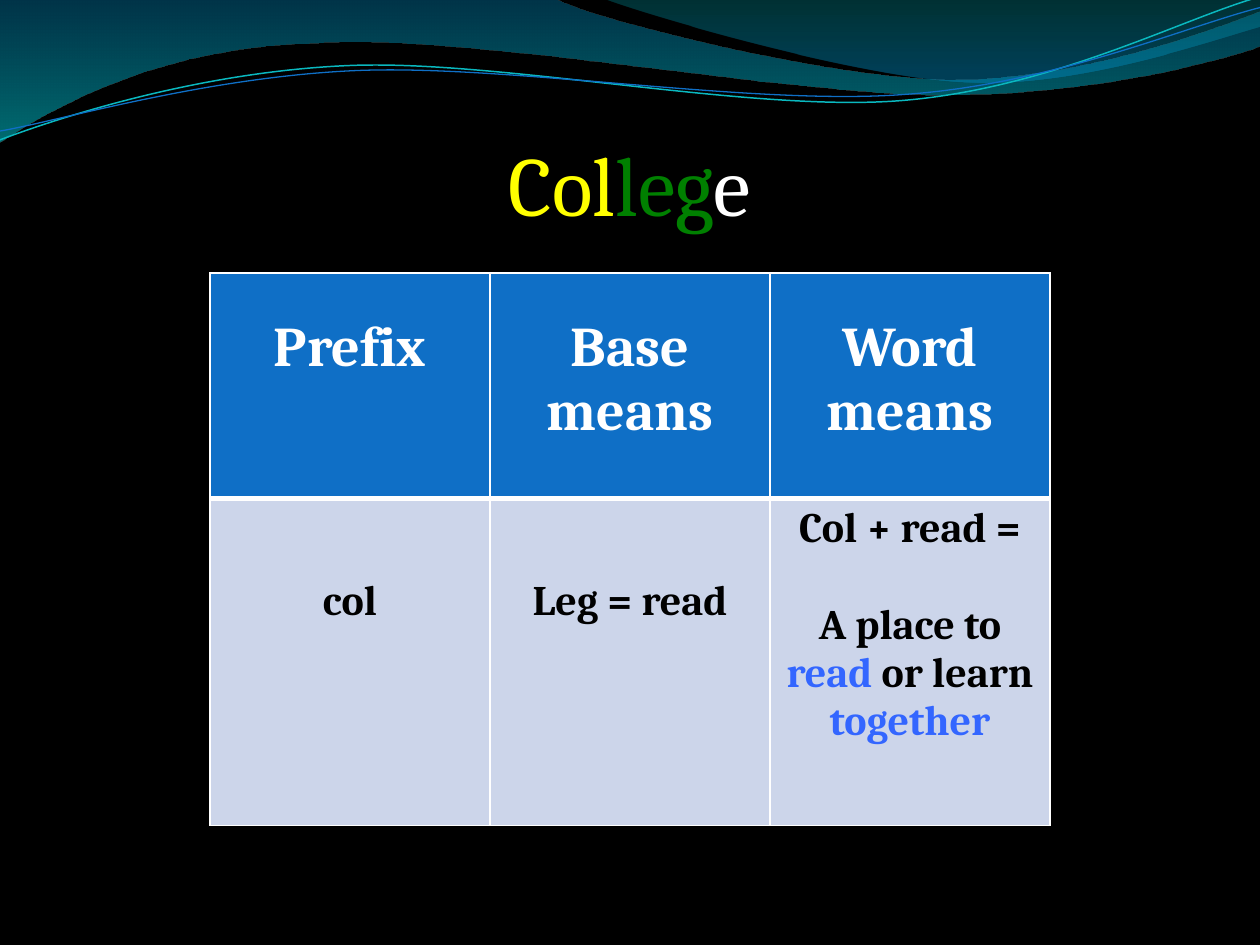
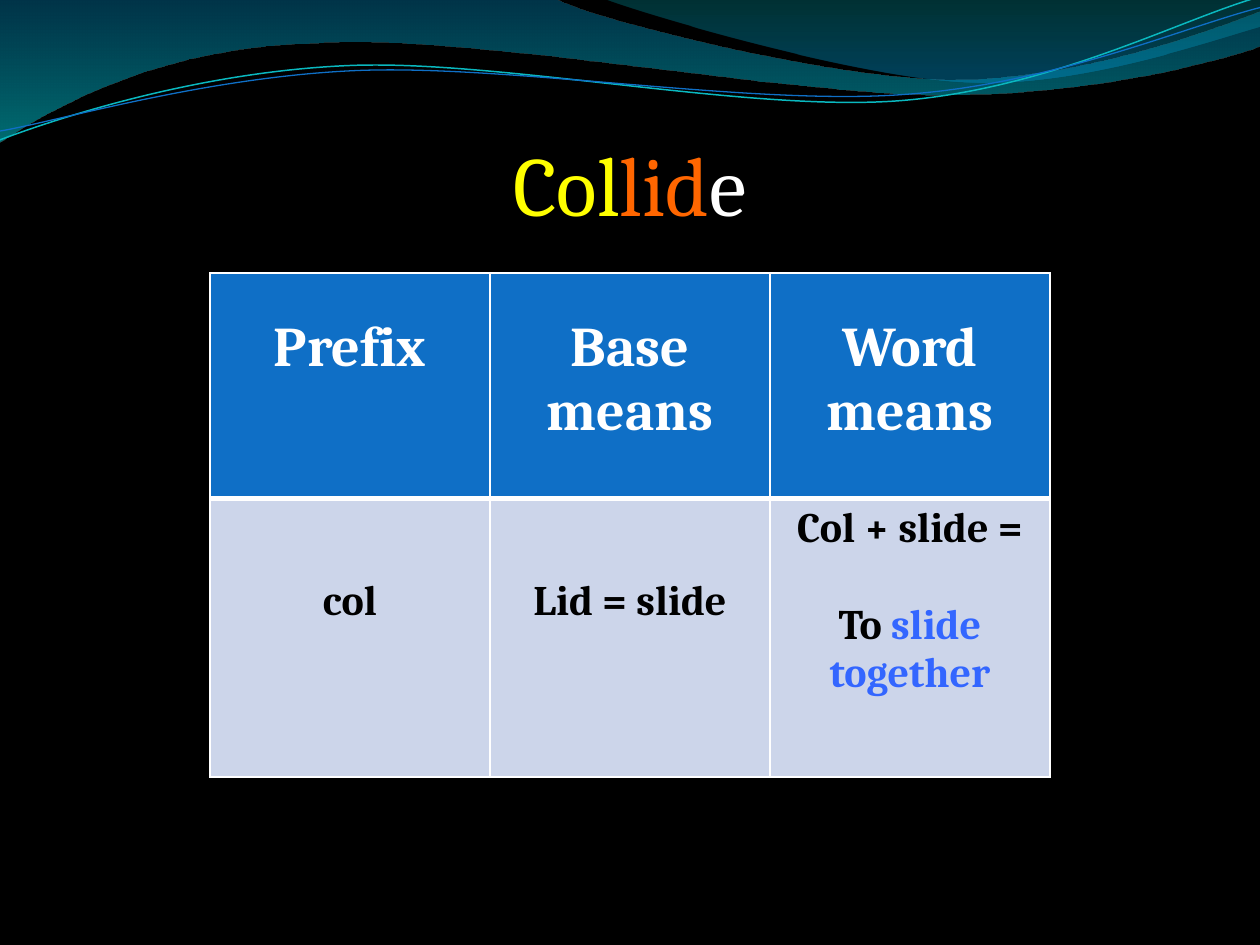
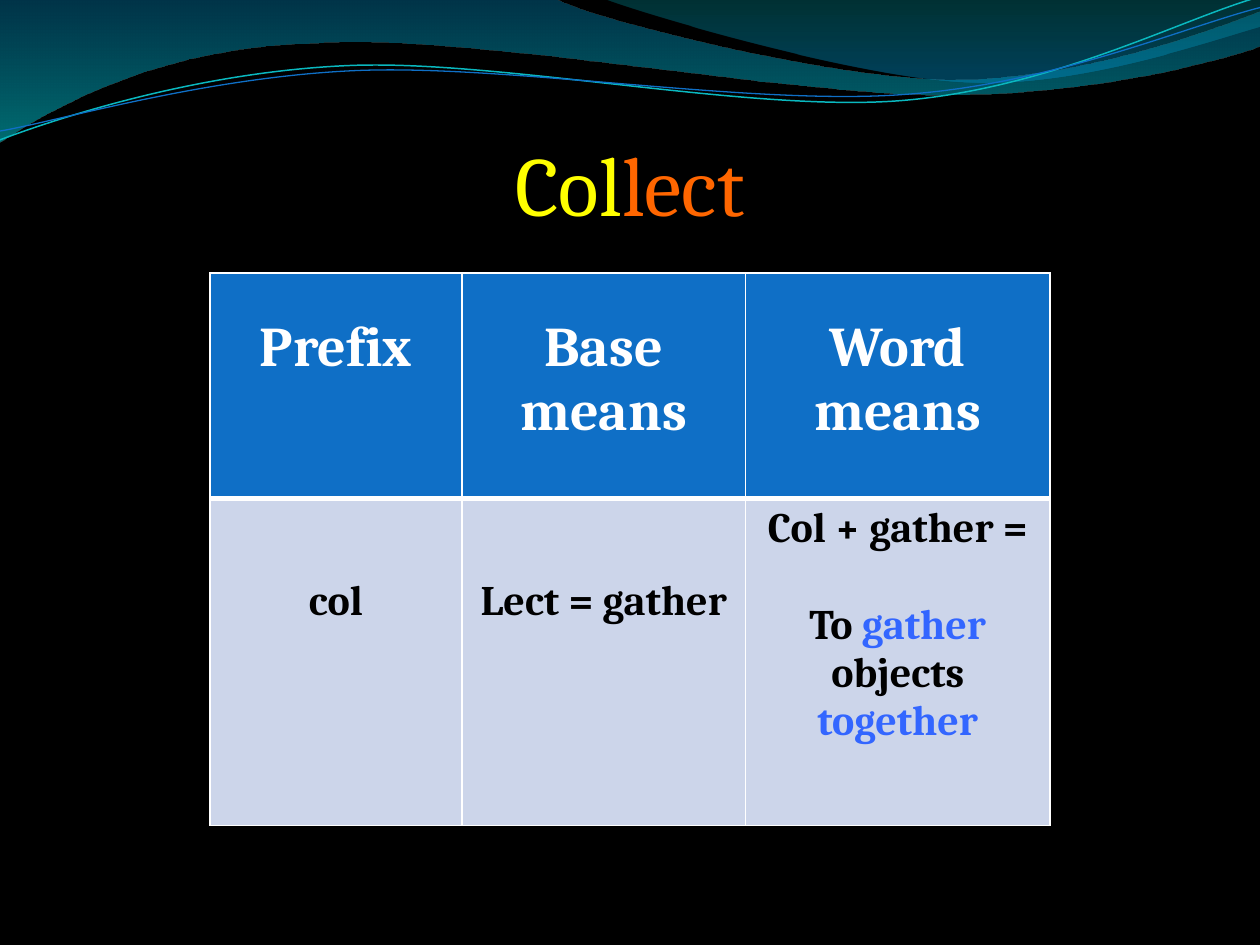
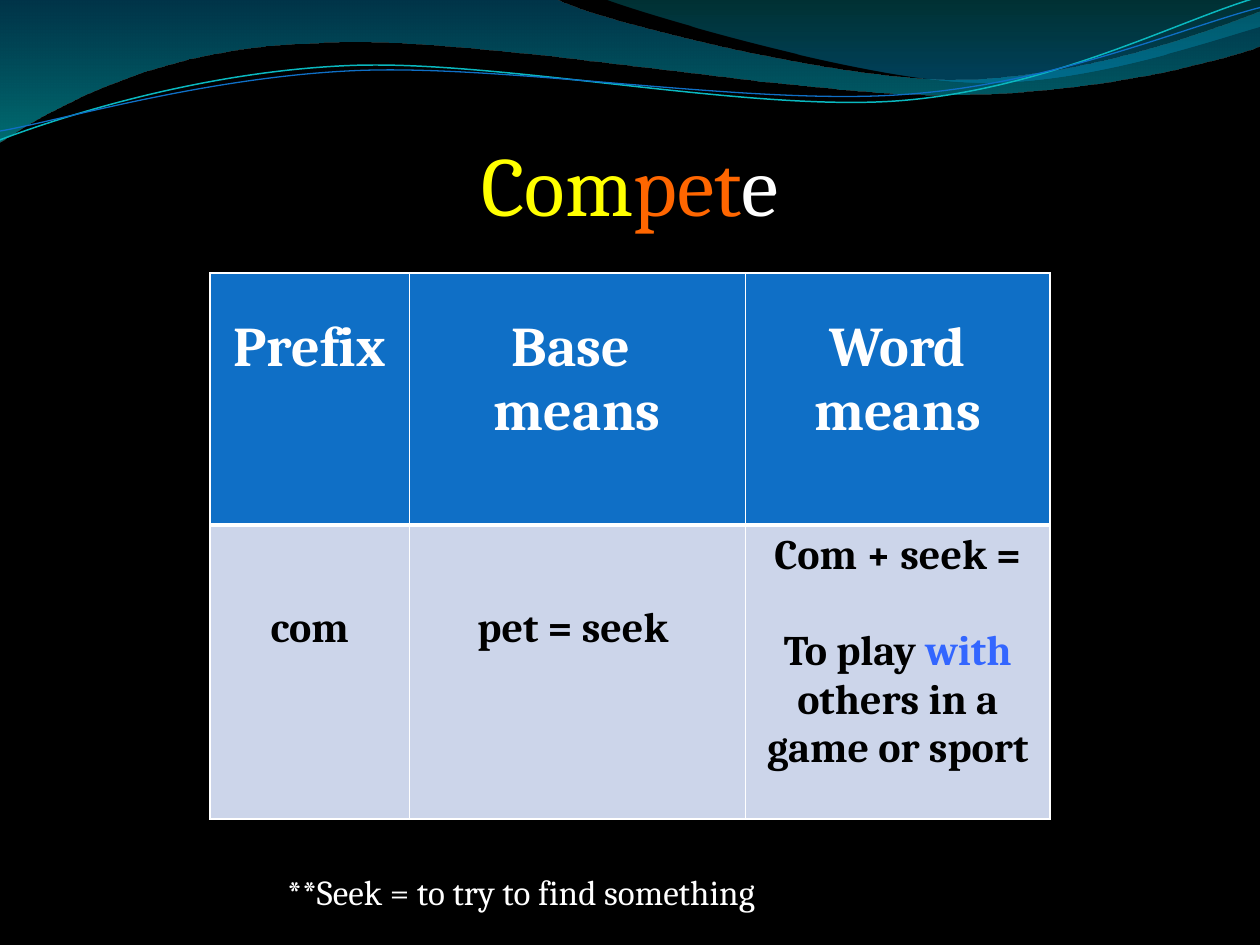
from math import cos, radians, sin

from lxml.etree import SubElement
from pptx import Presentation
from pptx.dml.color import RGBColor
from pptx.enum.text import MSO_ANCHOR, PP_ALIGN
from pptx.oxml.ns import qn
from pptx.util import Inches, Pt

# Colours and type
BLACK = RGBColor(0x00, 0x00, 0x00)
WHITE = RGBColor(0xFF, 0xFF, 0xFF)
YELLOW = RGBColor(0xFF, 0xFF, 0x00)
GREEN = RGBColor(0x00, 0x80, 0x00)
ORANGE = RGBColor(0xFF, 0x66, 0x00)
ACCENT = RGBColor(0x33, 0x66, 0xFF)
BLUE = RGBColor(0x0F, 0x6F, 0xC6)
PALE = RGBColor(0xCC, 0xD5, 0xEA)
CYAN = RGBColor(0x0A, 0xB8, 0xBF)
FONT = "Cambria"
TITLE_SIZE, HEAD_SIZE, CELL_SIZE, NOTE_SIZE = 48, 32, 24, 20

# Content: coloured parts of each word and table cells;
# column widths and row heights count units of a twelfth of an inch
UNIT = Inches(1) / 12
TABLE_LEFT, TABLE_TOP = 20, 26
HEADINGS = ["Prefix", "Base means", "Word means"]
EVEN = [80 / 3] * 3
WORDS = [
    {
        "title": [("Col", YELLOW), ("leg", GREEN), ("e", WHITE)],
        "title_height": 5.92,
        "columns": EVEN, "rows": [21.45, 31.15], "headings": HEADINGS,
        "prefix": "col", "base": "Leg = read", "sum": "Col + read =",
        "meaning": [("A place to ", BLACK), ("read ", ACCENT),
                    ("or learn ", BLACK), ("together", ACCENT)],
    },
    {
        "title": [("Col", YELLOW), ("lid", ORANGE), ("e", WHITE)],
        "title_height": 5.92,
        "columns": EVEN, "rows": [21.45, 26.55], "headings": HEADINGS,
        "prefix": "col", "base": "Lid = slide", "sum": "Col + slide =",
        "meaning": [("To ", BLACK), ("slide together", ACCENT)],
    },
    {
        "title": [("Col", YELLOW), ("lect", ORANGE)],
        "title_height": 5.92,
        "columns": [24, 27, 29], "rows": [21.45, 31.15], "headings": HEADINGS,
        "prefix": "col", "base": "Lect = gather", "sum": "Col + gather =",
        "meaning": [("To ", BLACK), ("gather ", ACCENT),
                    ("objects", BLACK), (" together", ACCENT)],
    },
    {
        "title": [("Com", YELLOW), ("pet", ORANGE), ("e", WHITE)],
        "title_height": 6.17,
        "columns": [19, 32, 29], "rows": [24, 28],
        "headings": ["Prefix", "Base \nmeans", "Word means"],
        "prefix": "com", "base": "pet = seek ", "sum": "Com + seek =",
        "meaning": [("To play ", BLACK), ("with", ACCENT),
                    (" others in a game or sport", BLACK)],
        "footnote": "**Seek = to try to find something",
    },
]

# Waves: one point makes a straight step, three points a Bézier step
BANDS = [
    ([[(0, 0)], [(4.4, -0.01)],
      [(4.76, 0.17), (6.64, 0.63), (7.58, 0.63)],
      [(8.53, 0.63), (9.58, 0.26), (10, 0.09)], [(10.01, 0.36)],
      [(9.83, 0.44), (8.7, 0.76), (7.46, 0.75)],
      [(6.22, 0.75), (3.82, 0.28), (2.57, 0.34)],
      [(1.29, 0.36), (0.46, 0.83), (-0.01, 1.13)], [(0, 0)]],
     [(0, RGBColor(0x00, 0x74, 0xA1), 45), (1, RGBColor(0x00, 0xC6, 0xCF), 55)]),
    ([[(4.79, -0.01)],
      [(5.09, 0.11), (6.82, 0.62), (7.69, 0.65)],
      [(8.56, 0.69), (9.61, 0.32), (10, 0.21)], [(10, 0)], [(4.79, -0.01)]],
     [(0, RGBColor(0x00, 0xA1, 0xA9), 30), (0.8, RGBColor(0x00, 0x8B, 0xBF), 45)]),
]
STRAND_TILT = -2.7
STRANDS = [
    ([[(0, 1.11)], [(0.48, 0.93), (1.58, 0.57), (2.77, 0.52)],
      [(3.95, 0.47), (5.93, 0.89), (7.13, 0.8)],
      [(8.33, 0.71), (9.38, 0.15), (9.98, -0.02)]],
     (4.99, 0.575), CYAN, 0.85),
    ([[(0, 1.04)], [(0.47, 0.96), (1.64, 0.61), (2.83, 0.56)],
      [(4.03, 0.51), (5.97, 0.84), (7.17, 0.75)],
      [(8.36, 0.67), (9.41, 0.21), (10, 0.06)]],
     (4.995, 0.59), BLUE, 0.75),
]


def level(steps, centre):
    """Turn tilted steps back to level around their centre."""
    turn = radians(-STRAND_TILT)
    cx, cy = centre
    return [[(cx + (x - cx) * cos(turn) - (y - cy) * sin(turn),
              cy + (x - cx) * sin(turn) + (y - cy) * cos(turn)) for x, y in step]
            for step in steps]


def add_wave(shapes, steps, close):
    points = [(Inches(x), Inches(y)) for step in steps for x, y in step]
    builder = shapes.build_freeform(*points[0])
    builder.add_line_segments(points[1:], close=close)
    wave = builder.convert_to_shape()
    wave.shadow.inherit = False
    # Join each three segments of a Bézier step into one curve
    segments = iter(list(wave.element.iter(qn("a:lnTo"))))
    for step in steps[1:]:
        parts = [next(segments) for _ in step]
        if len(step) == 3:
            parts[0].addprevious(curve := SubElement(parts[0].getparent(), qn("a:cubicBezTo")))
            for part in parts:
                curve.append(part[0])
                part.getparent().remove(part)
    return wave


def add_waves(shapes):
    waves = []
    for steps, stops in BANDS:
        band = add_wave(shapes, steps, True)
        band.line.fill.background()
        band.fill.gradient()
        band.fill.gradient_angle = 270
        for stop, (position, colour, _) in zip(band.fill.gradient_stops, stops):
            stop.position = position
            stop.color.rgb = colour
        for node, (_, _, opacity) in zip(band.element.spPr.iter(qn("a:srgbClr")), stops):
            SubElement(node, qn("a:alpha"), val=str(opacity * 1000))
        waves.append(band)
    for steps, centre, colour, width in STRANDS:
        strand = add_wave(shapes, level(steps, centre), False)
        strand.rotation = STRAND_TILT
        strand.fill.background()
        strand.line.color.rgb = colour
        strand.line.width = Pt(width)
        waves.append(strand)
    return waves


def style(run, size, colour, bold=False):
    run.font.name, run.font.size, run.font.bold = FONT, Pt(size), bold
    run.font.color.rgb = colour


def add_parts(paragraph, parts, size, bold=False):
    for text, colour in parts:
        run = paragraph.add_run()
        run.text = text
        style(run, size, colour, bold)


def fill_cell(cell, text, size, colour, fill, drop, top, bottom):
    """Write a centred cell; drop is its top margin, top and bottom are border widths."""
    cell.text_frame.text = text
    cell.margin_top = Inches(drop)
    for paragraph in cell.text_frame.paragraphs:
        paragraph.alignment = PP_ALIGN.CENTER
        for run in paragraph.runs:
            style(run, size, colour, True)
    properties = cell._tc.get_or_add_tcPr()
    for side, width in (("L", 1), ("R", 1), ("T", top), ("B", bottom)):
        border = SubElement(properties, qn("a:ln" + side), w=str(Pt(width)))
        solid = SubElement(border, qn("a:solidFill"))
        SubElement(solid, qn("a:srgbClr"), val=str(WHITE))
    cell.fill.solid()
    cell.fill.fore_color.rgb = fill


def units(count):
    return round(count * UNIT)


def add_word_table(slide, word):
    columns, rows = word["columns"], word["rows"]
    grid = slide.shapes.add_table(len(rows), len(columns), units(TABLE_LEFT), units(TABLE_TOP),
                                  units(sum(columns)), units(sum(rows))).table
    for column, width in zip(grid.columns, columns):
        column.width = units(width)
    for row, height in zip(grid.rows, rows):
        row.height = units(height)
    answers = [(word["prefix"], 0.63), (word["base"], 0.63), (word["sum"], 0.05)]
    for n, (heading, (answer, drop)) in enumerate(zip(word["headings"], answers)):
        fill_cell(grid.cell(0, n), heading, HEAD_SIZE, WHITE, BLUE, 0.34, 1, 3)
        fill_cell(grid.cell(1, n), answer, CELL_SIZE, BLACK, PALE, drop, 3, 1)
    meaning = grid.cell(1, 2).text_frame.add_paragraph()
    meaning.alignment = PP_ALIGN.CENTER
    meaning.space_before = Pt(27.7)
    add_parts(meaning, word["meaning"], CELL_SIZE, True)


def add_footnote(slide, text):
    footnote = slide.shapes.add_textbox(Inches(2.18), Inches(6.86), Inches(4.21), Inches(0.44))
    footnote.text_frame.word_wrap = False
    footnote.text_frame.text = text
    style(footnote.text_frame.paragraphs[0].runs[0], NOTE_SIZE, WHITE)


def add_word_slide(prs, layout, word):
    slide = prs.slides.add_slide(layout)
    title = slide.shapes.title
    title.left, title.top, title.width, title.height = map(
        Inches, (0.5, 1, 9, word["title_height"]))
    title.text_frame.vertical_anchor = MSO_ANCHOR.TOP
    heading = title.text_frame.paragraphs[0]
    heading.alignment = PP_ALIGN.CENTER
    add_parts(heading, word["title"], TITLE_SIZE)
    add_word_table(slide, word)
    if "footnote" in word:
        add_footnote(slide, word["footnote"])
    return slide


def main():
    prs = Presentation()
    prs.slide_width, prs.slide_height = Inches(10), Inches(7.5)
    background = prs.slide_master.background.fill
    background.solid()
    background.fore_color.rgb = BLACK
    layout = prs.slide_layouts[5]
    slides = [add_word_slide(prs, layout, word) for word in WORDS]

    # Waves are drawn once and moved to the shared layout, behind its placeholders
    for n, wave in enumerate(add_waves(slides[0].shapes)):
        wave.element.xpath(".//p:cNvPr")[0].set("id", str(100 + n))
        layout.shapes.element.insert(2 + n, wave.element)

    prs.save("out.pptx")


if __name__ == "__main__":
    main()
